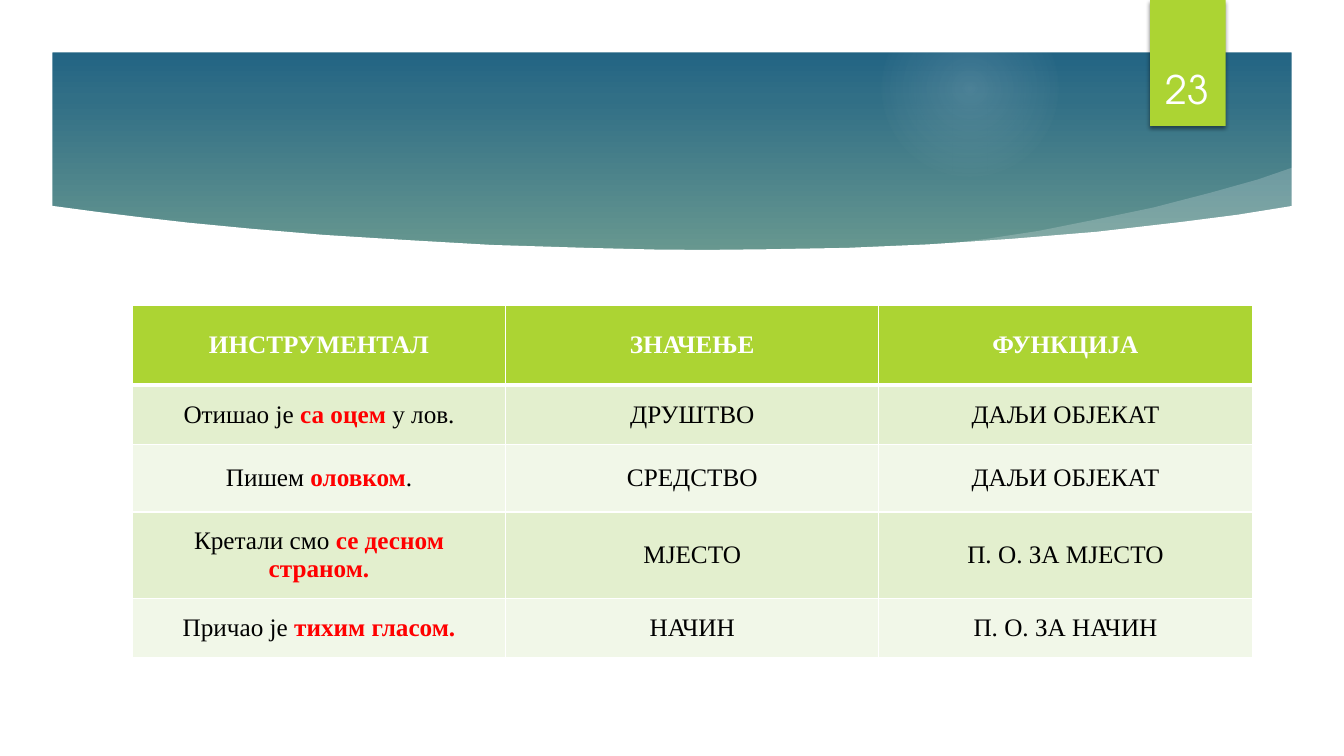
from dataclasses import dataclass
from typing import Optional

from lxml.etree import SubElement
from pptx import Presentation
from pptx.dml.color import RGBColor
from pptx.enum.shapes import MSO_SHAPE
from pptx.enum.text import MSO_ANCHOR, PP_ALIGN
from pptx.oxml import parse_xml
from pptx.oxml.ns import nsdecls, qn
from pptx.util import Pt

COLORS = {
    "white": "FFFFFF", "black": "000000", "red": "FF0000", "lime": "ACD433",
    "band_dark": "E3EFCE", "band_light": "F1F7E8", "glow": "F7F7F7",
    "sky_top": "0E5580", "sky": "316F86", "meadow": "DAECA3", "meadow_end": "E6F2C2",
}
TABLE_FONT, NUMBER_FONT = "Times New Roman", "TeX Gyre Adventor"
WIDTH, HEIGHT, MARGIN = 960, 540, 37.4
COL_WIDTH = 266.6


@dataclass
class Stop:
    pos: int
    color: str
    alpha: int = 100


@dataclass
class Row:
    height: float
    fill: str
    cells: tuple[str, str, str]  # *stars* mark the red bold words


ROWS = [
    Row(56.9, "lime", ("ИНСТРУМЕНТАЛ", "ЗНАЧЕЊЕ", "ФУНКЦИЈА")),
    Row(42.3, "band_dark", ("Отишао је *са оцем *у лов.", "ДРУШТВО", "ДАЉИ ОБЈЕКАТ")),
    Row(48.3, "band_light", ("Пишем *оловком*.", "СРЕДСТВО", "ДАЉИ ОБЈЕКАТ")),
    Row(61.8, "band_dark", ("Кретали смо *се десном страном.*", "МЈЕСТО", "П. О. ЗА МЈЕСТО")),
    Row(42.3, "band_light", ("Причао је *тихим гласом.*", "НАЧИН", "П. О. ЗА НАЧИН")),
]
SKY = [Stop(0, "sky_top"), Stop(13, "sky"), Stop(74, "meadow"),
       Stop(83, "meadow"), Stop(100, "meadow_end")]
GLOW = [Stop(0, "glow", 14), Stop(36, "glow", 7), Stop(73, "glow", 0)]

SWOOSH = [(669.6, 175), (704.9, 170.6), (742.3, 164.9), (781.9, 157), (823.7, 148.3),
          (865.4, 137.5), (898.6, 128.2), (923.8, 119.5), (928, 154), (672.5, 180)]
BODY = [(36, 504), (36, 146.9), (68, 151.2), (97, 154.8), (134.6, 159.1), (179.3, 163.4),
        (231, 167.8), (288.7, 171.4), (351.4, 175), (419.8, 177.1), (473, 178.4),
        (509.8, 178.5), (547, 178.1), (604.8, 177.1), (663.1, 174.6), (722.9, 170.6),
        (783.4, 165.6), (843.8, 158.6), (884.2, 153.4), (924.5, 146.9), (924.5, 504)]


def rgb(name: str) -> RGBColor:
    return RGBColor.from_string(COLORS[name])


def color_xml(name: str, alpha: int = 100) -> str:
    return f'<a:srgbClr val="{COLORS[name]}"><a:alpha val="{alpha * 1000}"/></a:srgbClr>'


def set_gradient(fill, element, stops: list[Stop], radial: bool = False) -> None:
    """Give fill, which lives inside element, a vertical or radial gradient."""
    fill.gradient()
    old = next(element.iter(qn("a:gradFill")))
    gs = "".join(f'<a:gs pos="{st.pos * 1000}">{color_xml(st.color, st.alpha)}</a:gs>'
                 for st in stops)
    direction = ('<a:path path="circle"><a:fillToRect l="50000" t="50000" r="50000" '
                 'b="50000"/></a:path>' if radial else '<a:lin ang="5400000" scaled="0"/>')
    new = parse_xml(f'<a:gradFill {nsdecls("a")} rotWithShape="1">'
                    f'<a:gsLst>{gs}</a:gsLst>{direction}</a:gradFill>')
    old.getparent().replace(old, new)


def style_shape(sp, fill: Optional[str] = None, alpha: int = 100) -> None:
    sp.shadow.inherit = False
    sp.line.fill.background()
    if fill:
        sp.fill.solid()
        sp.fill.fore_color.rgb = rgb(fill)
    if alpha < 100:
        clr = next(sp.element.spPr.iter(qn("a:srgbClr")))
        SubElement(clr, qn("a:alpha"), val=str(alpha * 1000))


def add_preset(s, kind: MSO_SHAPE, x: float, y: float, w: float, h: float,
               fill: Optional[str] = None):
    sp = s.shapes.add_shape(kind, Pt(x), Pt(y), Pt(w), Pt(h))
    style_shape(sp, fill)
    return sp


def add_outline(s, points: list[tuple[float, float]], fill: str, alpha: int = 100) -> None:
    pts = [(round(x * 100), round(y * 100)) for x, y in points]
    fb = s.shapes.build_freeform(*pts[0], scale=Pt(0.01))
    fb.add_line_segments(pts[1:], close=True)
    style_shape(fb.convert_to_shape(), fill, alpha)


def write_text(tf, text: str, *, font: str, size: float, color: str,
               bold: bool = False) -> None:
    """Write centred text; parts between stars become red and bold."""
    p = tf.paragraphs[0]
    p.alignment = PP_ALIGN.CENTER
    for i, part in enumerate(text.split("*")):
        if not part:
            continue
        marked = i % 2 == 1
        r = p.add_run()
        r.text = part
        r.font.name, r.font.size = font, Pt(size)
        r.font.bold = bold or marked
        r.font.color.rgb = rgb("red" if marked else color)


def set_borders(cell, top: float, bottom: float) -> None:
    tcPr = cell._tc.get_or_add_tcPr()
    sides = {"lnL": 1, "lnR": 1, "lnT": top, "lnB": bottom}
    for i, (tag, width) in enumerate(sides.items()):
        tcPr.insert(i, parse_xml(
            f'<a:{tag} {nsdecls("a")} w="{Pt(width)}"><a:solidFill>'
            f'{color_xml("white")}</a:solidFill></a:{tag}>'))


def add_case_table(s) -> None:
    height = sum(row.height for row in ROWS)
    table = s.shapes.add_table(len(ROWS), 3, Pt(94.6), Pt(218.3),
                               Pt(3 * COL_WIDTH), Pt(height)).table
    table.horz_banding = False
    for col in table.columns:
        col.width = Pt(COL_WIDTH)
    for i, row in enumerate(ROWS):
        table.rows[i].height = Pt(row.height)
        header = i == 0
        for j, text in enumerate(row.cells):
            cell = table.cell(i, j)
            cell.vertical_anchor = MSO_ANCHOR.MIDDLE
            cell.fill.solid()
            cell.fill.fore_color.rgb = rgb(row.fill)
            set_borders(cell, top=3 if i == 1 else 1, bottom=3 if header else 1)
            write_text(cell.text_frame, text, font=TABLE_FONT, size=18,
                       color="white" if header else "black", bold=header)


def add_number_tab(s) -> None:
    tab = add_preset(s, MSO_SHAPE.RECTANGLE, 821.5, 0, 54, 90, "lime")
    effects = tab.element.spPr.find(qn("a:effectLst"))
    effects.append(parse_xml(
        f'<a:outerShdw {nsdecls("a")} blurRad="{Pt(3)}" dist="{Pt(2)}" dir="5400000" '
        f'rotWithShape="0">{color_xml("black", 45)}</a:outerShdw>'))
    tf = s.shapes.add_textbox(Pt(815), Pt(23), Pt(66), Pt(60.5)).text_frame
    tf.word_wrap = True
    tf.vertical_anchor = MSO_ANCHOR.BOTTOM
    write_text(tf, "23", font=NUMBER_FONT, size=28, color="white")


def main() -> None:
    prs = Presentation()
    prs.slide_width, prs.slide_height = Pt(WIDTH), Pt(HEIGHT)
    s = prs.slides.add_slide(prs.slide_layouts[6])
    set_gradient(s.background.fill, s.element, SKY)
    glow = add_preset(s, MSO_SHAPE.OVAL, 630, 0, 126, 126)
    set_gradient(glow.fill, glow.element.spPr, GLOW, radial=True)
    add_outline(s, SWOOSH, "white", alpha=20)
    add_outline(s, BODY, "white")
    frame = add_preset(s, MSO_SHAPE.FRAME, 0, 0, WIDTH, HEIGHT, "white")
    frame.adjustments[0] = MARGIN / HEIGHT
    add_number_tab(s)
    add_case_table(s)
    prs.save("out.pptx")


if __name__ == "__main__":
    main()
